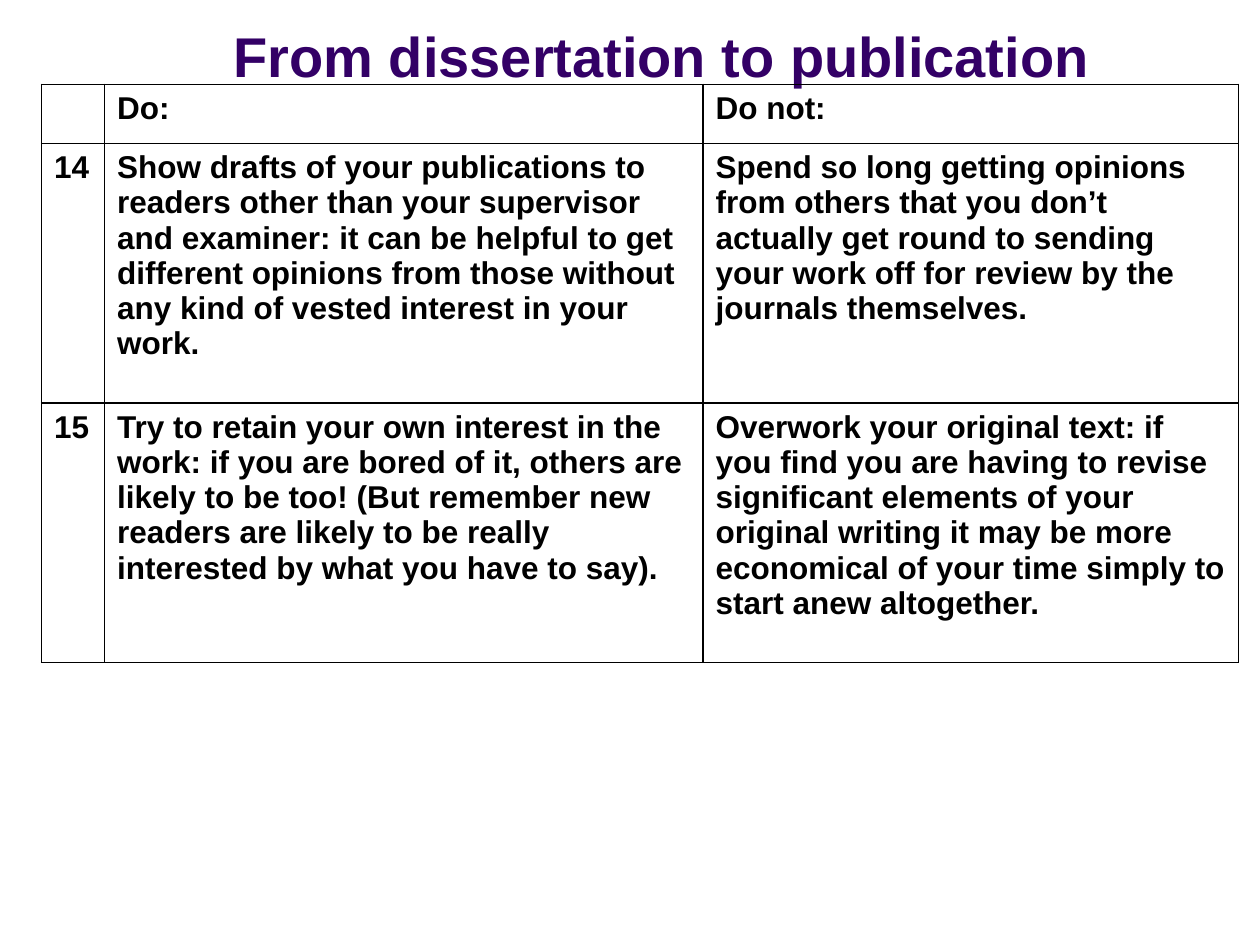
from typing import NamedTuple

from pptx import Presentation
from pptx.dml.color import RGBColor
from pptx.enum.text import MSO_ANCHOR, PP_ALIGN as Align
from pptx.oxml import parse_xml
from pptx.oxml.ns import nsdecls
from pptx.util import Inches, Pt

PURPLE = RGBColor(0x33, 0x00, 0x66)
BLACK = RGBColor(0x00, 0x00, 0x00)
FONT = "Arial"
COLUMN_WIDTHS = (0.5, 4.75, 4.25)


class AdviceRow(NamedTuple):
    number: str
    do: str
    do_not: str
    height: float


ADVICE = (
    AdviceRow("", "Do:", "Do not:", 0.47),
    AdviceRow(
        "14",
        "Show drafts of your publications to readers other than your supervisor and examiner: "
        "it can be helpful to get different opinions from those without any kind of vested "
        "interest in your work.",
        "Spend so long getting opinions from others that you don’t actually get round to "
        "sending your work off for review by the journals themselves.",
        2.06,
    ),
    AdviceRow(
        "15",
        "Try to retain your own interest in the work: if you are bored of it, others are likely "
        "to be too! (But remember new readers are likely to be really interested by what you "
        "have to say).",
        "Overwork your original text: if you find you are having to revise significant elements "
        "of your original writing it may be more economical of your time simply to start anew "
        "altogether.",
        2.06,
    ),
)


def write_text(frame, text: str, *, size: float = 18, color: RGBColor = BLACK,
               align: Align = Align.LEFT) -> None:
    frame.word_wrap = True
    paragraph = frame.paragraphs[0]
    paragraph.alignment = align
    run = paragraph.add_run()
    run.text = text
    run.font.name = FONT
    run.font.size = Pt(size)
    run.font.bold = True
    run.font.color.rgb = color


def set_borders(cell, color: RGBColor = BLACK, width: float = 1) -> None:
    """Line all four sides; borders must precede the fill in the cell properties."""
    properties = cell._tc.get_or_add_tcPr()
    for index, side in enumerate(("lnL", "lnR", "lnT", "lnB")):
        properties.insert(index, parse_xml(
            f'<a:{side} {nsdecls("a")} w="{Pt(width)}"><a:solidFill>'
            f'<a:srgbClr val="{color}"/></a:solidFill></a:{side}>'))


def add_title(slide, text: str) -> None:
    title = slide.shapes.add_textbox(Inches(0.5), Inches(0.17), Inches(8.25), Inches(0.58))
    title.text_frame.vertical_anchor = MSO_ANCHOR.BOTTOM
    write_text(title.text_frame, text, size=32, color=PURPLE, align=Align.RIGHT)


def add_advice_table(slide) -> None:
    table = slide.shapes.add_table(
        len(ADVICE), len(COLUMN_WIDTHS), Inches(0.33), Inches(0.67),
        Inches(sum(COLUMN_WIDTHS)), Inches(sum(row.height for row in ADVICE))).table
    table.first_row = table.horz_banding = False
    for column, width in zip(table.columns, COLUMN_WIDTHS):
        column.width = Inches(width)
    for row, advice in zip(table.rows, ADVICE):
        row.height = Inches(advice.height)
        for cell, text in zip(row.cells, (advice.number, advice.do, advice.do_not)):
            cell.fill.background()
            set_borders(cell)
            if text:
                write_text(cell.text_frame, text)


def main() -> None:
    presentation = Presentation()
    presentation.slide_width, presentation.slide_height = Inches(10), Inches(7.5)
    slide = presentation.slides.add_slide(presentation.slide_layouts[6])
    add_title(slide, "From dissertation to publication")
    add_advice_table(slide)
    presentation.save("out.pptx")


if __name__ == "__main__":
    main()
